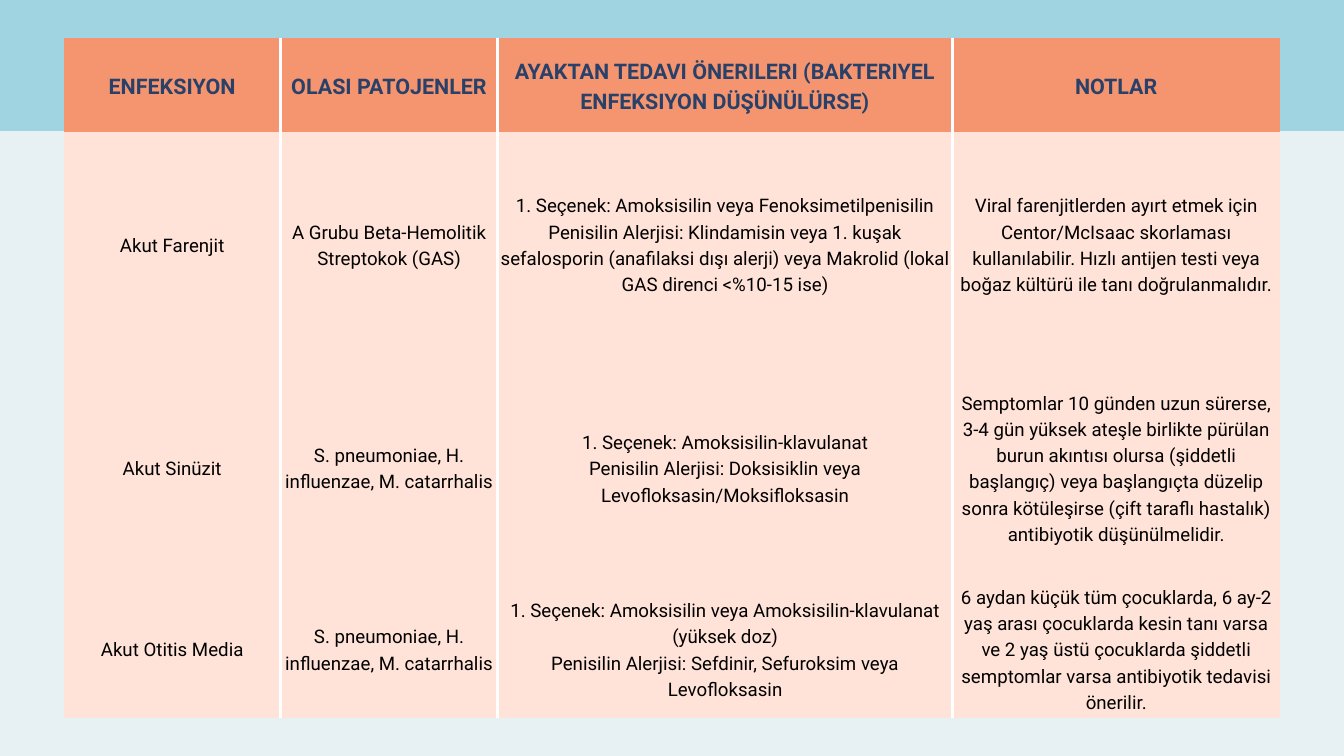
from lxml import etree
from pptx import Presentation
from pptx import util as u
from pptx.dml import color
from pptx.enum import shapes, text
from pptx.oxml import ns

HUES = {
    "page": "E7F1F4",
    "band": "A1D4E1",
    "head": "F4956F",
    "body": "FFE3D8",
    "title": "294069",
    "ink": "000000",
    "rule": "FFFFFF",
}
HEAD = {"fill": "head", "ink": "title", "size": 23, "bold": True}
BODY = {"fill": "body", "ink": "ink", "size": 20, "bold": False}
COLS = [8.2, 8.2, 17.2, 12.37]
ROWS = [3.56, 8.46, 8.46, 5.23]
GERMS = "S. pneumoniae, H. influenzae, M. catarrhalis"
DATA = [
    ["ENFEKSIYON", "OLASI PATOJENLER",
     "AYAKTAN TEDAVI ÖNERILERI (BAKTERIYEL ENFEKSIYON DÜŞÜNÜLÜRSE)", "NOTLAR"],
    ["Akut Farenjit", "A Grubu Beta-Hemolitik Streptokok (GAS)",
     "1. Seçenek: Amoksisilin veya Fenoksimetilpenisilin\n"
     "Penisilin Alerjisi: Klindamisin veya 1. kuşak sefalosporin "
     "(anafilaksi dışı alerji) veya Makrolid (lokal GAS direnci <%10-15 ise)",
     "Viral farenjitlerden ayırt etmek için Centor/McIsaac skorlaması "
     "kullanılabilir. Hızlı antijen testi veya boğaz kültürü ile tanı "
     "doğrulanmalıdır."],
    ["Akut Sinüzit", GERMS,
     "1. Seçenek: Amoksisilin-klavulanat\n"
     "Penisilin Alerjisi: Doksisiklin veya Levofloksasin/Moksifloksasin",
     "Semptomlar 10 günden uzun sürerse, 3-4 gün yüksek ateşle birlikte "
     "pürülan burun akıntısı olursa (şiddetli başlangıç) veya başlangıçta "
     "düzelip sonra kötüleşirse (çift taraflı hastalık) antibiyotik "
     "düşünülmelidir."],
    ["Akut Otitis Media", GERMS,
     "1. Seçenek: Amoksisilin veya Amoksisilin-klavulanat (yüksek doz)\n"
     "Penisilin Alerjisi: Sefdinir, Sefuroksim veya Levofloksasin",
     "6 aydan küçük tüm çocuklarda, 6 ay-2 yaş arası çocuklarda kesin tanı "
     "varsa ve 2 yaş üstü çocuklarda şiddetli semptomlar varsa antibiyotik "
     "tedavisi önerilir."],
]


def apply(item, values):
    for name, value in values.items():
        setattr(item, name, value)


def paint(fill, hue):
    fill.solid()
    fill.fore_color.rgb = color.RGBColor.from_string(HUES[hue])


def add_band(slide, width, height):
    band = slide.shapes.add_shape(shapes.MSO_SHAPE.RECTANGLE, 0, 0, width, height)
    band.shadow.inherit = False
    band.line.fill.background()
    paint(band.fill, "band")


def add_rules(cell, col):
    drawn = {"L": col > 0, "R": col < len(COLS) - 1, "T": False, "B": False}
    props = cell._tc.get_or_add_tcPr()
    for spot, (side, shown) in enumerate(drawn.items()):
        line = etree.Element(ns.qn(f"a:ln{side}"), w=str(u.Pt(3.75) if shown else 0))
        if shown:
            solid = etree.SubElement(line, ns.qn("a:solidFill"))
            etree.SubElement(solid, ns.qn("a:srgbClr"), val=HUES["rule"])
        else:
            etree.SubElement(line, ns.qn("a:noFill"))
        props.insert(spot, line)


def fill_cell(cell, words, style):
    apply(cell, {
        "text": words,
        "vertical_anchor": text.MSO_ANCHOR.MIDDLE,
        "margin_left": 0, "margin_right": 0,
        "margin_top": 0, "margin_bottom": 0,
    })
    paint(cell.fill, style["fill"])
    for para in cell.text_frame.paragraphs:
        apply(para, {
            "alignment": text.PP_ALIGN.CENTER,
            "line_spacing": u.Pt(style["size"] * 1.4),
        })
        for run in para.runs:
            apply(run.font, {
                "name": "Roboto",
                "size": u.Pt(style["size"]),
                "bold": style["bold"],
            })
            paint(run.font.fill, style["ink"])


def add_grid(slide, left, top):
    frame = slide.shapes.add_table(len(ROWS), len(COLS), left, top,
                                   u.Cm(sum(COLS)), u.Cm(sum(ROWS)))
    grid = frame.table
    apply(grid, {"first_row": False, "horz_banding": False})
    for col, width in zip(grid.columns, COLS):
        col.width = u.Cm(width)
    for row, height in zip(grid.rows, ROWS):
        row.height = u.Cm(height)
    for r, line in enumerate(DATA):
        for c, words in enumerate(line):
            cell = grid.cell(r, c)
            fill_cell(cell, words, BODY if r else HEAD)
            add_rules(cell, c)


def main():
    deck = Presentation()
    apply(deck, {"slide_width": u.Cm(50.8), "slide_height": u.Cm(28.58)})
    slide = deck.slides.add_slide(deck.slide_layouts[6])
    paint(slide.background.fill, "page")
    add_band(slide, deck.slide_width, u.Cm(4.95))
    add_grid(slide, u.Cm(2.41), u.Cm(1.42))
    deck.save("out.pptx")


if __name__ == "__main__":
    main()
